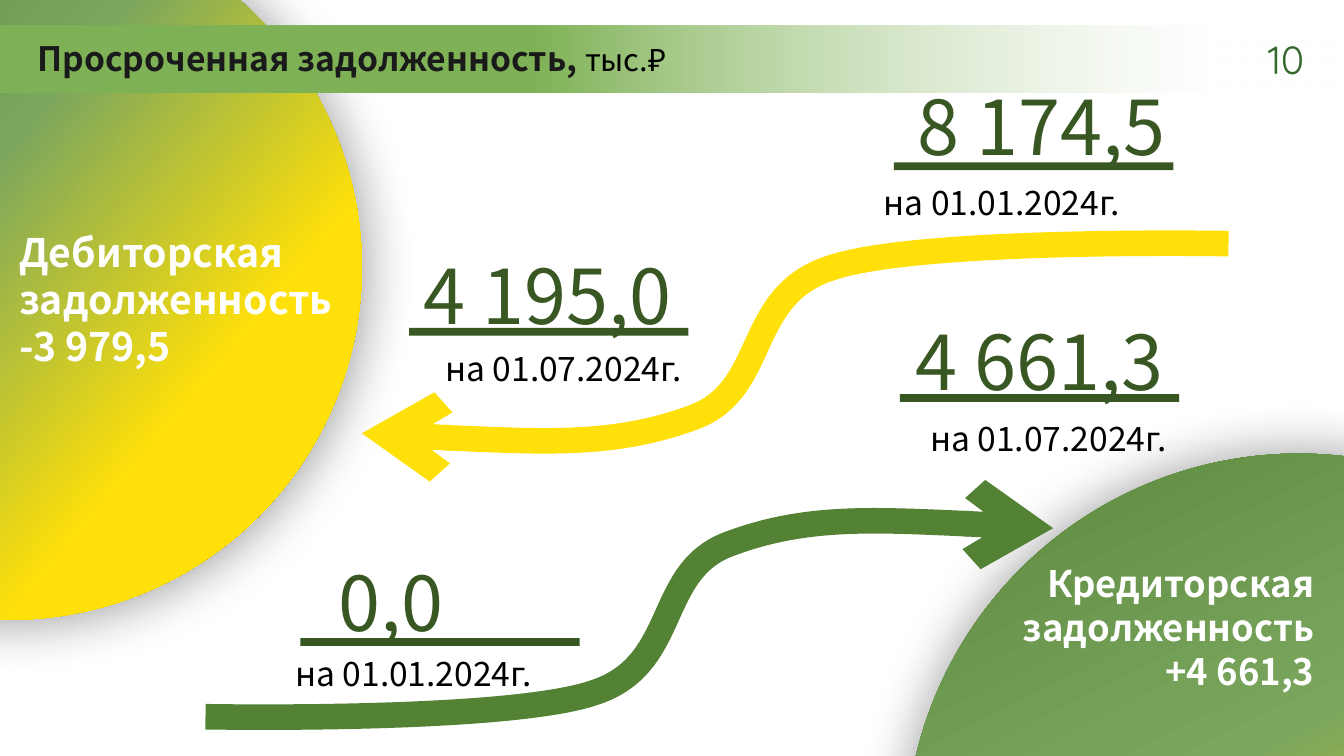
from dataclasses import dataclass

from lxml.etree import SubElement
from pptx import Presentation
from pptx.dml.color import RGBColor
from pptx.enum.shapes import MSO_SHAPE as Kind
from pptx.enum.text import MSO_ANCHOR as Anchor, MSO_AUTO_SIZE as Fit, PP_ALIGN as Align
from pptx.oxml.ns import qn
from pptx.util import Cm, Pt


@dataclass(frozen=True)
class Theme:
    """Colours, fonts and type sizes of the slide."""
    font: str = "Noto Sans CJK SC"
    thin: str = "Quicksand"
    ink: str = "1A1A1A"
    black: str = "000000"
    white: str = "FFFFFF"
    dark: str = "385723"
    green: str = "548235"
    leaf: str = "7BA65E"
    band: str = "7FB256"
    page: str = "33692B"
    gold: str = "FFE009"
    head: int = 24
    unit: int = 22
    num: int = 28
    value: int = 54
    label: int = 24
    debt: int = 28
    credit: int = 26
    stroke: float = 18.25


T = Theme()
CURVE = [(0.15, 0.04), (0.29, 0.07), (0.38, -0.08),
         (0.47, -0.22), (0.44, -0.72), (0.54, -0.87),
         (0.64, -1.03), (1, -1), (1, -1)]


def cms(*vals):
    """Turn centimetre numbers into lengths."""
    return [Cm(v) for v in vals]


def write(para, text, size, color, bold=False, font=T.font):
    """Add one styled run to a paragraph."""
    run = para.add_run()
    run.text = text
    run.font.name, run.font.size, run.font.bold = font, Pt(size), bold
    run.font.color.rgb = RGBColor.from_string(color)


def prep(frame, size, align, count=1):
    """Set up a text frame and return its paragraphs."""
    frame.word_wrap = True
    frame.auto_size = Fit.NONE
    frame.vertical_anchor = Anchor.TOP
    paras = [frame.paragraphs[0]] + [frame.add_paragraph() for _ in range(count - 1)]
    for para in paras:
        para.alignment = align
        para.line_spacing = Pt(size * 1.2)
    return paras


def note(shapes, box, lines, size, color, align, bold=False, font=T.font):
    """Place a text box with one paragraph per line."""
    frame = shapes.add_textbox(*cms(*box)).text_frame
    for para, line in zip(prep(frame, size, align, len(lines)), lines):
        write(para, line, size, color, bold, font)


def block(shapes, kind, box):
    """Place a plain shape without line or shadow."""
    shape = shapes.add_shape(kind, *cms(*box))
    shape.shadow.inherit = False
    shape.line.fill.background()
    return shape


def blend(shape, stops, angle):
    """Fill a shape with gradient stops of place, colour and opacity."""
    shape.fill.gradient()
    shape.fill.gradient_angle = -angle % 360
    group = shape.element.find(".//" + qn("a:gsLst"))
    for stop in list(group):
        group.remove(stop)
    for place, color, alpha in stops:
        stop = SubElement(group, qn("a:gs"), pos=str(place * 1000))
        tint = SubElement(stop, qn("a:srgbClr"), val=color)
        SubElement(tint, qn("a:alpha"), val=str(alpha * 1000))


def disc(shapes, box, turn=0, gap=0, way=0):
    """Place a large gradient circle with a soft shadow."""
    shape = block(shapes, Kind.OVAL, box)
    shape.rotation = turn
    blend(shape, [(6, T.green, 100), (42, T.leaf, 100), (73, T.gold, 100)], 40)
    shade = SubElement(shape.element.spPr.find(qn("a:effectLst")), qn("a:outerShdw"),
                       blurRad=str(Pt(40)), dist=str(Pt(gap)),
                       dir=str(way * 60000), algn="ctr", rotWithShape="0")
    tint = SubElement(shade, qn("a:srgbClr"), val=T.black)
    SubElement(tint, qn("a:alpha"), val="40000")


def header(slide, box):
    """Place the heading band with its title and page number."""
    x, y, w, h = box
    band = block(slide.shapes, Kind.RECTANGLE, box)
    blend(band, [(39, T.band, 100), (89, T.white, 40)], 0)
    title = slide.shapes.title
    title.left, title.top, title.width, title.height = cms(x + 0.69, y + 0.2, 18.72, 1.27)
    para = prep(title.text_frame, T.head, Align.LEFT)[0]
    write(para, "Просроченная задолженность, ", T.head, T.ink, True)
    write(para, "тыс.₽", T.unit, T.black)
    band.element.addnext(title.element)
    note(slide.shapes, (x + 30.96, y + 0.12, 2.9, 1.45), ["10"],
         T.num, T.page, Align.CENTER, font=T.thin)


def figure(slide, box, value, date, up, down):
    """Place a ruled value with its date, offset from the rule."""
    x, y, w, h = box
    shapes = slide.shapes.add_group_shape().shapes
    rule = block(shapes, Kind.RECTANGLE, box)
    rule.fill.solid()
    rule.fill.fore_color.rgb = RGBColor.from_string(T.dark)
    note(shapes, (x + up[0], y + up[1], 8.81, 2.57), [value],
         T.value, T.dark, Align.CENTER)
    note(shapes, (x + down[0], y + down[1], 7.42, 1.27), [f"на {date}г."],
         T.label, T.black, Align.JUSTIFY)


def arrow(slide, box, color):
    """Draw the curved arrow from its tip across a signed span."""
    x, y, w, h = box
    pen = slide.shapes.build_freeform(*cms(x, y))
    pen.add_line_segments([cms(x + w * u, y + h * v) for u, v in CURVE], close=False)
    shape = pen.convert_to_shape()
    shape.shadow.inherit = False
    shape.fill.background()
    shape.line.color.rgb = RGBColor.from_string(color)
    shape.line.width = Pt(T.stroke)
    SubElement(shape.element.spPr.find(qn("a:ln")), qn("a:headEnd"), type="arrow")
    track = shape.element.find(".//" + qn("a:path"))
    steps = track.findall(qn("a:lnTo"))
    for i in range(0, len(steps), 3):
        bend = SubElement(track, qn("a:cubicBezTo"))
        for step in steps[i:i + 3]:
            bend.append(step[0])
            track.remove(step)


def main():
    """Build the slide and save it."""
    deck = Presentation()
    deck.slide_width, deck.slide_height = cms(33.87, 19.05)
    slide = deck.slides.add_slide(deck.slide_layouts[5])
    shapes = slide.shapes
    disc(shapes, (-8.66, -2.16, 17.78, 17.78), gap=3, way=45)
    header(slide, (0, 0.64, 34.42, 1.7))
    figure(slide, (22.53, 4.09, 7.04, 0.2), "8 174,5", "01.01.2024",
           (-0.69, -2.21), (-0.51, 0.36))
    figure(slide, (10.31, 8.26, 7.04, 0.2), "4 195,0", "01.07.2024",
           (-0.91, -2.11), (0.66, 0.38))
    arrow(slide, (9.12, 10.92, 21.84, 4.78), T.gold)
    note(shapes, (0.23, 5.64, 11.58, 5.05), ["Дебиторская задолженность", "-3 979,5"],
         T.debt, T.white, Align.LEFT, True)
    disc(shapes, (22.81, 11.43, 19.84, 19.84), turn=24.1)
    note(shapes, (22.53, 14.02, 10.85, 3.58), ["Кредиторская задолженность", "+4 661,3"],
         T.credit, T.white, Align.RIGHT, True)
    arrow(slide, (26.54, 13.31, -21.36, -4.75), T.green)
    figure(slide, (7.57, 16.08, 7.04, 0.2), "0,0", "01.01.2024",
           (-2.11, -2.19), (-0.38, 0.25))
    figure(slide, (22.68, 9.93, 7.04, 0.2), "4 661,3", "01.07.2024",
           (-0.89, -2.11), (0.51, 0.48))
    deck.save("out.pptx")


if __name__ == "__main__":
    main()
